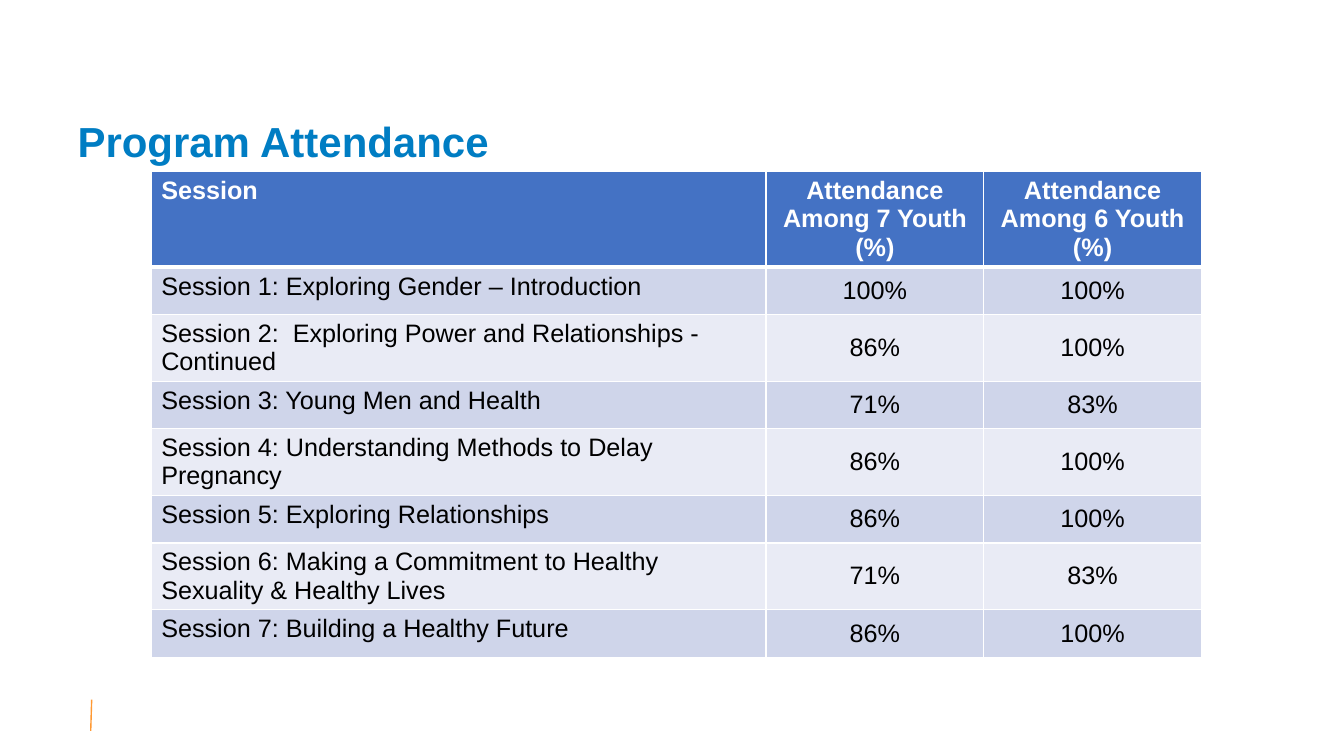
"""Build the Program Attendance slide."""
from dataclasses import dataclass

from lxml.etree import SubElement
from pptx import Presentation
from pptx.dml.color import RGBColor as RGB
from pptx.enum.shapes import MSO_CONNECTOR as CONNECTOR
from pptx.enum.text import MSO_ANCHOR as ANCHOR, PP_ALIGN as ALIGN
from pptx.oxml.ns import qn
from pptx.util import Pt


@dataclass(frozen=True)
class Theme:
    """Colours and type sizes of the slide."""
    font: str = "Arial"
    title: str = "007DC3"
    header: str = "4472C4"
    bands: tuple = ("CFD5EA", "E9EBF5")
    white: str = "FFFFFF"
    black: str = "000000"
    accent: str = "FF9933"
    title_size: int = 30
    table_size: int = 18


THEME = Theme()
HEADINGS = ("Session", "Attendance Among 7 Youth (%)", "Attendance Among 6 Youth (%)")
SESSIONS = (
    ("Session 1: Exploring Gender – Introduction", "100%", "100%"),
    ("Session 2:  Exploring Power and Relationships - Continued", "86%", "100%"),
    ("Session 3: Young Men and Health", "71%", "83%"),
    ("Session 4: Understanding Methods to Delay Pregnancy", "86%", "100%"),
    ("Session 5: Exploring Relationships", "86%", "100%"),
    ("Session 6: Making a Commitment to Healthy Sexuality & Healthy Lives", "71%", "83%"),
    ("Session 7: Building a Healthy Future", "86%", "100%"),
)
COLUMN_WIDTHS = (439.2, 155.5, 155.5)
HEADER_HEIGHT, SHORT_ROW, TALL_ROW = 68.4, 34, 47.3


def style_runs(p, size, color, bold):
    """Format every run of a paragraph."""
    for r in p.runs:
        r.font.name = THEME.font
        r.font.size = Pt(size)
        r.font.bold = bold
        r.font.color.rgb = RGB.from_string(color)


def add_title(s, text):
    """Fill and place the title placeholder."""
    sp = s.shapes.title
    sp.left, sp.top, sp.width, sp.height = Pt(48.2), Pt(82.8), Pt(856), Pt(59.8)
    tf = sp.text_frame
    tf.text = text
    tf.word_wrap = True
    tf.vertical_anchor = ANCHOR.TOP
    p = tf.paragraphs[0]
    p.alignment = ALIGN.LEFT
    p.line_spacing = 0.9
    style_runs(p, THEME.title_size, THEME.title, True)


def add_borders(cell, bottom):
    """Draw white borders round a cell."""
    tc_pr = cell._tc.get_or_add_tcPr()
    for tag, width in (("a:lnL", 1), ("a:lnR", 1), ("a:lnT", 1), ("a:lnB", bottom)):
        ln = SubElement(tc_pr, qn(tag), w=str(Pt(width)))
        fill = SubElement(ln, qn("a:solidFill"))
        SubElement(fill, qn("a:srgbClr"), val=THEME.white)


def fill_cell(cell, text, is_header, is_value, fill):
    """Write and format one table cell."""
    cell.text = text
    add_borders(cell, 3 if is_header else 1)
    cell.fill.solid()
    cell.fill.fore_color.rgb = RGB.from_string(fill)
    cell.vertical_anchor = ANCHOR.MIDDLE if is_value else ANCHOR.TOP
    p = cell.text_frame.paragraphs[0]
    p.alignment = ALIGN.CENTER if is_value else ALIGN.LEFT
    style_runs(p, THEME.table_size, THEME.white if is_header else THEME.black, is_header)


def add_attendance_table(s):
    """Add the table of sessions and attendance."""
    rows = (HEADINGS, *SESSIONS)
    heights = [HEADER_HEIGHT] + [TALL_ROW if i % 2 else SHORT_ROW for i in range(len(SESSIONS))]
    table = s.shapes.add_table(len(rows), len(HEADINGS), Pt(108), Pt(122.4),
                               Pt(sum(COLUMN_WIDTHS)), Pt(sum(heights))).table
    for column, width in zip(table.columns, COLUMN_WIDTHS):
        column.width = Pt(width)
    for i, (values, height) in enumerate(zip(rows, heights)):
        table.rows[i].height = Pt(height)
        fill = THEME.bands[(i - 1) % 2] if i else THEME.header
        for j, text in enumerate(values):
            fill_cell(table.cell(i, j), text, i == 0, j > 0, fill)


def add_footer_line(s):
    """Add the thin accent line at the foot."""
    line = s.shapes.add_connector(CONNECTOR.STRAIGHT, Pt(65.5), Pt(499.7), Pt(64.8), Pt(522))
    line.line.color.rgb = RGB.from_string(THEME.accent)
    line.line.width = Pt(1)
    SubElement(line._element.spPr, qn("a:effectLst"))


def main():
    """Build and save the slide."""
    prs = Presentation()
    prs.slide_width, prs.slide_height = Pt(960), Pt(540)
    s = prs.slides.add_slide(prs.slide_layouts[5])
    add_footer_line(s)
    add_title(s, "Program Attendance")
    add_attendance_table(s)
    prs.save("out.pptx")


if __name__ == "__main__":
    main()
